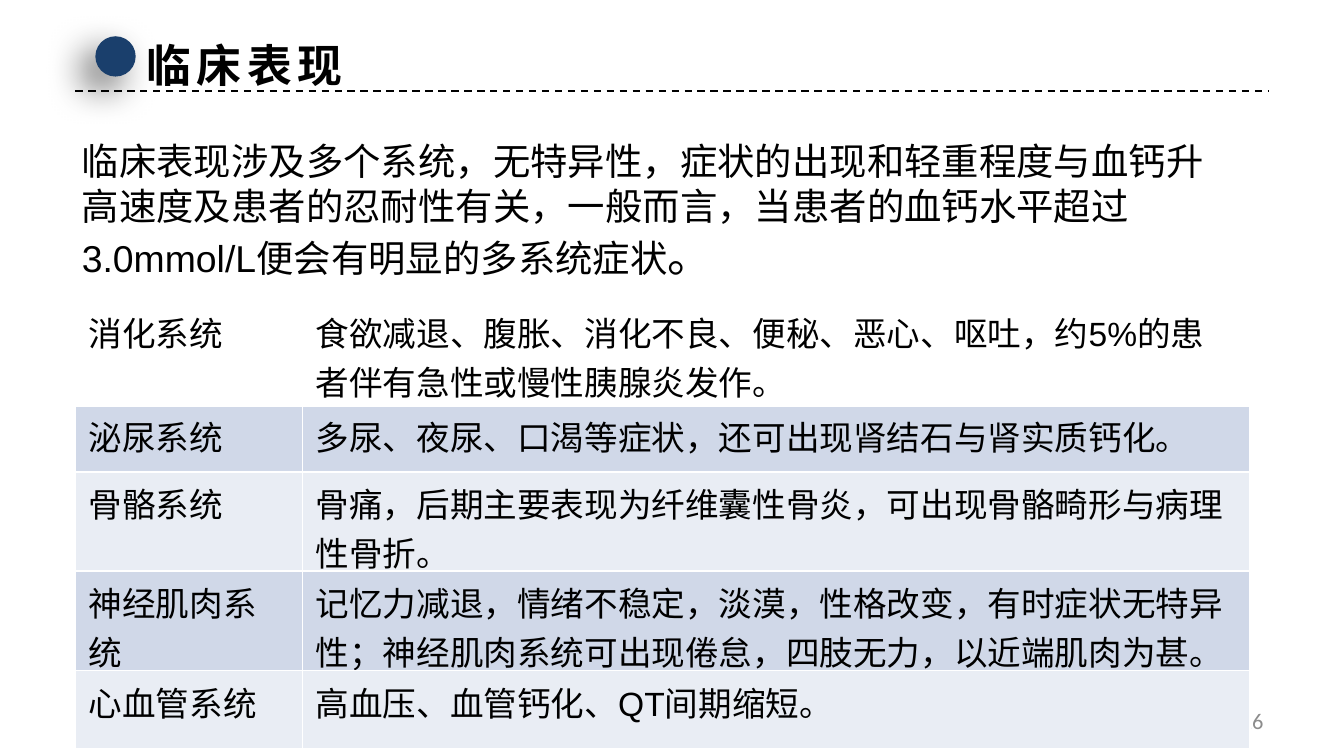
from dataclasses import dataclass

from lxml.etree import SubElement
from pptx import Presentation
from pptx.dml.color import RGBColor
from pptx.enum.dml import MSO_LINE
from pptx.enum.shapes import MSO_CONNECTOR, MSO_SHAPE
from pptx.enum.text import MSO_ANCHOR, MSO_AUTO_SIZE, PP_ALIGN
from pptx.oxml.ns import qn
from pptx.util import Inches, Pt


@dataclass(frozen=True)
class Theme:
    text: str = "000000"
    muted: str = "8C8C8C"
    accent: str = "1A3F6C"
    border: str = "FFFFFF"
    bands: tuple = ("D0D8E8", "E9EDF4")
    heading_font: str = "Noto Sans CJK SC"
    body_font: str = "Arial"
    number_font: str = "Calibri"
    heading_size: int = 24
    intro_size: int = 20
    table_size: int = 18
    number_size: int = 12


THEME = Theme()
BODY = {"name": THEME.body_font, "color": THEME.text}
HEADING_FORMAT = {"name": THEME.heading_font, "size": THEME.heading_size,
                  "color": THEME.text, "bold": True}
INTRO_FORMAT = {**BODY, "size": THEME.intro_size}
INTRO_END_FORMAT = {**BODY, "size": THEME.heading_size}
TABLE_FORMAT = {**BODY, "size": THEME.table_size}
NUMBER_FORMAT = {"name": THEME.number_font, "size": THEME.number_size,
                 "color": THEME.muted}

HEADING = "临床表现"
INTRO = ("临床表现涉及多个系统，无特异性，症状的出现和轻重程度与血钙升高速度及患者的"
         "忍耐性有关，一般而言，当患者的血钙水平超过3.0mmol/L便会有明显的多系统症状")
INTRO_END = "。"
SYMPTOMS = [
    ("消化系统", "食欲减退、腹胀、消化不良、便秘、恶心、呕吐，约5%的患者伴有急性或慢性胰腺炎发作。"),
    ("泌尿系统", "多尿、夜尿、口渴等症状，还可出现肾结石与肾实质钙化。"),
    ("骨骼系统", "骨痛，后期主要表现为纤维囊性骨炎，可出现骨骼畸形与病理性骨折。"),
    ("神经肌肉系统", "记忆力减退，情绪不稳定，淡漠，性格改变，有时症状无特异性；"
                "神经肌肉系统可出现倦怠，四肢无力，以近端肌肉为甚。"),
    ("心血管系统", "高血压、血管钙化、QT间期缩短。"),
]
COLUMN_WIDTHS = (1.69, 7.05)
ROW_HEIGHTS = (0.77, 0.5, 0.74, 0.74, 0.58)


def rgb(color):
    return RGBColor.from_string(color)


def add_run(paragraph, text, text_format):
    run = paragraph.add_run()
    run.text = text
    for name, value in text_format.items():
        if name == "color":
            run.font.color.rgb = rgb(value)
        else:
            setattr(run.font, name, Pt(value) if name == "size" else value)


def add_text(slide, box, runs, **frame_format):
    """Add a one-paragraph text box from (text, format) pairs."""
    frame = slide.shapes.add_textbox(*map(Inches, box)).text_frame
    for name, value in {"word_wrap": True, **frame_format}.items():
        setattr(frame, name, value)
    paragraph = frame.paragraphs[0]
    for text, text_format in runs:
        add_run(paragraph, text, text_format)
    return paragraph


def add_soft_shadow(shape):
    """Cast a blurred shadow down and to the left."""
    shape.shadow.inherit = False
    effects = shape._element.spPr.find(qn("a:effectLst"))
    shadow = SubElement(effects, qn("a:outerShdw"), blurRad=str(Pt(20)),
                        dist=str(Pt(10)), dir=str(135 * 60000),
                        algn="tr", rotWithShape="0")
    color = SubElement(shadow, qn("a:srgbClr"), val="000000")
    SubElement(color, qn("a:alpha"), val="60000")


def add_header(slide, left, top, width):
    rule_y = Inches(top + 0.45)
    rule = slide.shapes.add_connector(MSO_CONNECTOR.STRAIGHT, Inches(left), rule_y,
                                      Inches(left + width), rule_y)
    rule.line.color.rgb = rgb(THEME.text)
    rule.line.width = Pt(1)
    rule.line.dash_style = MSO_LINE.DASH
    SubElement(rule._element.spPr, qn("a:effectLst"))

    dot = slide.shapes.add_shape(MSO_SHAPE.OVAL, Inches(left + 0.15), Inches(top + 0.04),
                                 Inches(0.3), Inches(0.3))
    dot.fill.solid()
    dot.fill.fore_color.rgb = rgb(THEME.accent)
    dot.line.fill.background()
    add_soft_shadow(dot)

    heading = add_text(slide, (left + 0.43, top, 1.7, 0.5), [(HEADING, HEADING_FORMAT)],
                       word_wrap=False, auto_size=MSO_AUTO_SIZE.SHAPE_TO_FIT_TEXT)
    properties = heading.runs[0].font._element
    properties.set("spc", "300")
    SubElement(properties, qn("a:ea"), typeface=THEME.heading_font)


def add_slide_number(slide, box):
    number = add_text(slide, box, [("26", NUMBER_FORMAT)],
                      vertical_anchor=MSO_ANCHOR.MIDDLE)
    number.alignment = PP_ALIGN.RIGHT


def set_borders(cell, bottom):
    properties = cell._tc.get_or_add_tcPr()
    for side, width in {"L": 1, "R": 1, "T": 1, "B": bottom}.items():
        line = SubElement(properties, qn(f"a:ln{side}"), w=str(Pt(width)))
        fill = SubElement(line, qn("a:solidFill"))
        SubElement(fill, qn("a:srgbClr"), val=THEME.border)


def add_symptom_table(slide, left, top):
    table = slide.shapes.add_table(
        len(SYMPTOMS), len(COLUMN_WIDTHS), Inches(left), Inches(top),
        Inches(sum(COLUMN_WIDTHS)), Inches(sum(ROW_HEIGHTS))).table
    table.first_row = table.horz_banding = False
    for column, width in zip(table.columns, COLUMN_WIDTHS):
        column.width = Inches(width)
    for index, (row, height, texts) in enumerate(zip(table.rows, ROW_HEIGHTS, SYMPTOMS)):
        row.height = Inches(height)
        for cell, text in zip(row.cells, texts):
            add_run(cell.text_frame.paragraphs[0], text, TABLE_FORMAT)
            set_borders(cell, bottom=1 if index else 3)
            if index:
                cell.fill.solid()
                cell.fill.fore_color.rgb = rgb(THEME.bands[(index - 1) % 2])
            else:
                cell.fill.background()


def add_intro(slide, box):
    add_text(slide, box, [(INTRO, INTRO_FORMAT), (INTRO_END, INTRO_END_FORMAT)],
             auto_size=MSO_AUTO_SIZE.SHAPE_TO_FIT_TEXT)


def main():
    deck = Presentation()
    deck.slide_width = Inches(10)
    deck.slide_height = deck.slide_width * 9 // 16
    slide = deck.slides.add_slide(deck.slide_layouts[6])
    add_header(slide, 0.56, 0.23, 8.88)
    add_slide_number(slide, (7.17, 5.21, 2.33, 0.3))
    add_symptom_table(slide, 0.56, 2.24)
    add_intro(slide, (0.51, 0.98, 8.79, 1.18))
    deck.save("out.pptx")


if __name__ == "__main__":
    main()
